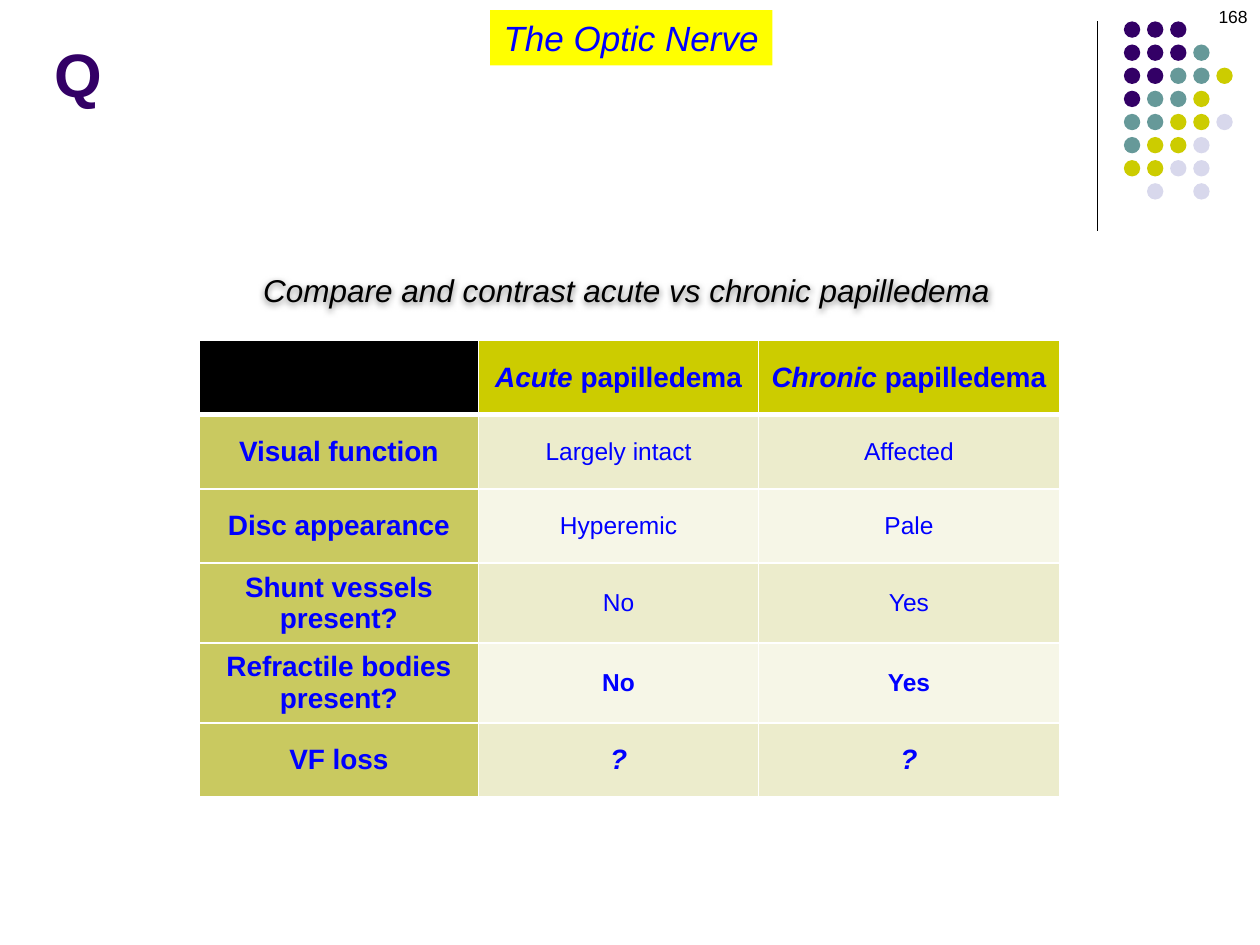
from lxml import etree
from pptx import Presentation
from pptx.dml.color import RGBColor
from pptx.enum.shapes import MSO_CONNECTOR, MSO_SHAPE
from pptx.enum.text import MSO_ANCHOR as Anchor, MSO_AUTO_SIZE as AutoSize, PP_ALIGN as Align
from pptx.oxml import parse_xml
from pptx.oxml.ns import nsdecls, qn
from pptx.util import Inches, Pt

COLORS = {
    "black": "000000", "white": "FFFFFF", "purple": "330066", "teal": "669999",
    "olive": "CCCC00", "lavender": "D8D8EC", "blue": "0000FF", "yellow": "FFFF00",
    "label": "C9C960", "band_dark": "ECECCC", "band_light": "F6F6E7",
}


def color(name):
    return RGBColor.from_string(COLORS[name])


def add_span(para, text, size, ink, bold=False, italic=False):
    span = para.add_run()
    span.text = text
    span.font.name = "Arial"
    span.font.size = Pt(size)
    span.font.bold = bold
    span.font.italic = italic
    span.font.color.rgb = color(ink)


deck = Presentation()
deck.slide_width, deck.slide_height = Inches(10), Inches(7.5)
page = deck.slides.add_slide(deck.slide_layouts[5])

# Divider and dot pattern
divider = page.shapes.add_connector(
    MSO_CONNECTOR.STRAIGHT, Inches(8.71), Inches(0.17), Inches(8.71), Inches(1.83))
divider.line.color.rgb = color("black")
divider.line.width = Pt(0.75)
etree.SubElement(divider._element.spPr, qn("a:effectLst"))

DOT_ROWS = ["PPP", "PPPT", "PPTTO", "PTTO", "TTOOL", "TOOL", "OOLL", " L L"]
DOT_COLORS = {"P": "purple", "T": "teal", "O": "olive", "L": "lavender"}
DOT_PITCH = 0.1835
dots = page.shapes.add_group_shape()
for row, pattern in enumerate(DOT_ROWS):
    for col, letter in enumerate(pattern):
        if letter == " ":
            continue
        dot = dots.shapes.add_shape(
            MSO_SHAPE.OVAL, Inches(8.92 + col * DOT_PITCH),
            Inches(0.17 + row * DOT_PITCH), Inches(0.13), Inches(0.13))
        dot.shadow.inherit = False
        dot.fill.solid()
        dot.fill.fore_color.rgb = color(DOT_COLORS[letter])
        dot.line.fill.background()

# Page number
number = page.shapes.add_textbox(Inches(7.67), 0, Inches(2.33), Inches(0.5))
number.text_frame.word_wrap = True
para = number.text_frame.paragraphs[0]
para.alignment = Align.RIGHT
add_span(para, "168", 10, "black")

# Title
title = page.shapes.title
title.left, title.top = Inches(0.33), Inches(0.39)
title.width, title.height = Inches(8.25), Inches(0.53)
title.text_frame.auto_size = AutoSize.NONE
title.text_frame.vertical_anchor = Anchor.BOTTOM
para = title.text_frame.paragraphs[0]
para.alignment = Align.LEFT
add_span(para, "Q", 35, "purple", bold=True)

# Topic banner
banner = page.shapes.add_shape(
    MSO_SHAPE.RECTANGLE, Inches(3.89), Inches(0.08), Inches(2.24), Inches(0.44))
banner.shadow.inherit = False
banner.fill.solid()
banner.fill.fore_color.rgb = color("yellow")
banner.line.fill.background()
banner.text_frame.word_wrap = False
banner.text_frame.auto_size = AutoSize.SHAPE_TO_FIT_TEXT
para = banner.text_frame.paragraphs[0]
para.alignment = Align.CENTER
add_span(para, "The Optic Nerve", 20, "blue", italic=True)

# Comparison table: each row is label, acute, chronic, value size, bold, italic
FINDINGS = [
    ("Visual function", "Largely intact", "Affected", 14, False, False),
    ("Disc appearance", "Hyperemic", "Pale", 14, False, False),
    ("Shunt vessels present?", "No", "Yes", 14, False, False),
    ("Refractile bodies present?", "No", "Yes", 14, True, False),
    ("VF loss", "?", "?", 16, True, True),
]
table = page.shapes.add_table(
    6, 3, Inches(1.58), Inches(2.7), Inches(6.83), Inches(3.64)).table
for column, width in zip(table.columns, (2.22, 2.22, 2.39)):
    column.width = Inches(width)
for table_row, height in zip(table.rows, (0.59, 0.59, 0.59, 0.63, 0.63, 0.59)):
    table_row.height = Inches(height)

for col, stage in enumerate(("Acute", "Chronic"), start=1):
    para = table.cell(0, col).text_frame.paragraphs[0]
    add_span(para, stage, 16, "blue", bold=True, italic=True)
    add_span(para, " papilledema", 16, "blue", bold=True)

for row, (label, acute, chronic, size, bold, italic) in enumerate(FINDINGS, start=1):
    add_span(table.cell(row, 0).text_frame.paragraphs[0], label, 16, "blue", bold=True)
    for col, finding in enumerate((acute, chronic), start=1):
        para = table.cell(row, col).text_frame.paragraphs[0]
        add_span(para, finding, size, "blue", bold, italic)

for row in range(6):
    for col in range(3):
        cell = table.cell(row, col)
        cell.vertical_anchor = Anchor.MIDDLE
        cell.text_frame.paragraphs[0].alignment = Align.CENTER
        if row == 0:
            fill = "olive" if col else "black"
        elif col == 0:
            fill = "label"
        else:
            fill = "band_dark" if row % 2 else "band_light"
        # Borders precede the fill in the cell properties
        properties = cell._tc.get_or_add_tcPr()
        for side in ("lnL", "lnR", "lnT", "lnB"):
            heavy = (row, side) in ((0, "lnB"), (1, "lnT"))
            properties.append(parse_xml(
                f'<a:{side} {nsdecls("a")} w="{Pt(3 if heavy else 1)}"><a:solidFill>'
                f'<a:srgbClr val="{COLORS["white"]}"/></a:solidFill></a:{side}>'))
        cell.fill.solid()
        cell.fill.fore_color.rgb = color(fill)

# Question with a soft shadow behind its letters
question = page.shapes.add_textbox(Inches(1.99), Inches(2.1), Inches(6.02), Inches(0.4))
question.text_frame.word_wrap = False
question.text_frame.auto_size = AutoSize.SHAPE_TO_FIT_TEXT
add_span(question.text_frame.paragraphs[0],
         "Compare and contrast acute vs chronic papilledema", 18, "black", italic=True)
question._element.spPr.append(parse_xml(
    f'<a:effectLst {nsdecls("a")}><a:outerShdw blurRad="{Pt(4)}" dist="{Pt(1)}" dir="5400000" '
    f'algn="t" rotWithShape="0"><a:srgbClr val="{COLORS["black"]}"><a:alpha val="50000"/>'
    '</a:srgbClr></a:outerShdw></a:effectLst>'))

deck.save("out.pptx")
